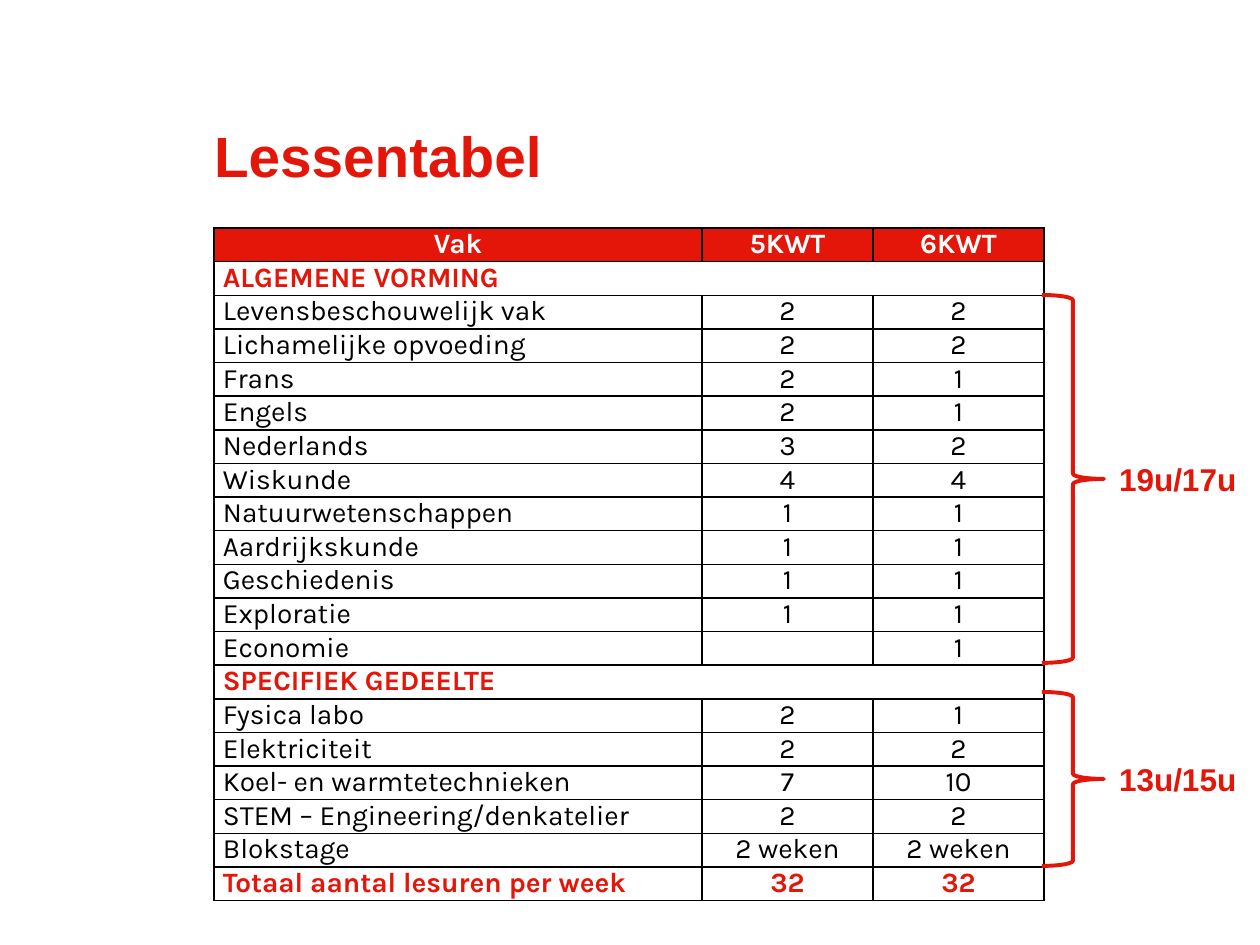
from pptx import Presentation
from pptx.dml.color import RGBColor
from pptx.enum.shapes import MSO_SHAPE
from pptx.enum.text import MSO_ANCHOR, PP_ALIGN
from pptx.oxml.ns import qn
from pptx.util import Pt
from lxml import etree

LEFT, CENTER = PP_ALIGN.LEFT, PP_ALIGN.CENTER
TOP = MSO_ANCHOR.TOP
BRACE = MSO_SHAPE.RIGHT_BRACE
EMU_PER_PX = 914400 / 126
COLORS = {"red": "E4160A", "brace": "E41509", "black": "000000", "white": "FFFFFF"}

HEADER = ("Vak", "5KWT", "6KWT")
GENERAL = [
    ("Levensbeschouwelijk vak", "2", "2"),
    ("Lichamelijke opvoeding", "2", "2"),
    ("Frans", "2", "1"),
    ("Engels", "2", "1"),
    ("Nederlands", "3", "2"),
    ("Wiskunde", "4", "4"),
    ("Natuurwetenschappen", "1", "1"),
    ("Aardrijkskunde", "1", "1"),
    ("Geschiedenis", "1", "1"),
    ("Exploratie", "1", "1"),
    ("Economie", "", "1"),
]
SPECIFIC = [
    ("Fysica labo", "2", "1"),
    ("Elektriciteit", "2", "2"),
    ("Koel- en warmtetechnieken", "7", "10"),
    ("STEM – Engineering/denkatelier", "2", "2"),
    ("Blokstage", "2 weken", "2 weken"),
]
TOTAL = ("Totaal aantal lesuren per week", "32", "32")
ROWS = [HEADER, ("ALGEMENE VORMING",), *GENERAL, ("SPECIFIEK GEDEELTE",), *SPECIFIC, TOTAL]
COLUMNS = (488, 171, 171)
ROW_HEIGHT = 32


def px(n):
    return round(n * EMU_PER_PX)


def rgb(name):
    return RGBColor.from_string(COLORS[name])


def write(tf, text, size=16, font="Karla", color="black", bold=False, align=LEFT):
    p = tf.paragraphs[0]
    p.alignment = align
    if not text:
        p._p.get_or_add_endParaRPr().set("sz", str(size * 100))
        return
    r = p.add_run()
    r.text = text
    r.font.size = Pt(size)
    r.font.name = font
    r.font.bold = bold
    r.font.color.rgb = rgb(color)


class Deck:
    def __init__(self, width, height):
        self.prs = Presentation()
        self.prs.slide_width, self.prs.slide_height = px(width), px(height)
        self.s = self.prs.slides.add_slide(self.prs.slide_layouts[6])

    def text(self, x, y, w, h, text, wrap=False, insets=(13, 6, 13, 6), **fmt):
        tf = self.s.shapes.add_textbox(px(x), px(y), px(w), px(h)).text_frame
        tf.word_wrap = wrap
        tf.vertical_anchor = TOP
        tf.margin_left, tf.margin_top, tf.margin_right, tf.margin_bottom = map(px, insets)
        write(tf, text, font="Arial", bold=True, **fmt)

    def brace(self, x, y, w, h, label):
        sp = self.s.shapes.add_shape(BRACE, px(x), px(y), px(w), px(h))
        sp.shadow.inherit = False
        sp.fill.background()
        sp.line.color.rgb = rgb("brace")
        sp.line.width = Pt(2.25)
        self.text(x + 64, y + h // 2 - 25, 144, 50, label, size=18, color="brace")

    def borders(self, cell):
        tc_pr = cell._tc.get_or_add_tcPr()
        for i, side in enumerate(("a:lnL", "a:lnR", "a:lnT", "a:lnB")):
            ln = etree.Element(qn(side), w=str(Pt(1)))
            fill = etree.SubElement(ln, qn("a:solidFill"))
            etree.SubElement(fill, qn("a:srgbClr"), val=COLORS["black"])
            tc_pr.insert(i, ln)

    def cell(self, cell, text, fill=None, **fmt):
        cell.margin_left = cell.margin_right = px(9)
        cell.margin_top = cell.margin_bottom = 0
        if fill:
            cell.fill.solid()
            cell.fill.fore_color.rgb = rgb(fill)
        else:
            cell.fill.background()
        self.borders(cell)
        write(cell.text_frame, text, **fmt)

    def table(self, x, y, columns, row_height, rows):
        frame = self.s.shapes.add_table(
            len(rows), len(columns), px(x), px(y), px(sum(columns)), px(row_height * len(rows)))
        table = frame.table
        table.first_row = table.horz_banding = False
        for column, width in zip(table.columns, columns):
            column.width = px(width)
        for i, row in enumerate(rows):
            is_header, is_section = row is HEADER, len(row) == 1
            strong = is_header or is_section or row is TOTAL
            color = "white" if is_header else "red" if strong else "black"
            for j in range(len(columns)):
                self.cell(table.cell(i, j), row[j] if j < len(row) else "",
                          fill="red" if is_header else None, color=color, bold=strong,
                          align=CENTER if j or is_header else LEFT)
            if is_section:
                table.cell(i, 0).merge(table.cell(i, len(columns) - 1))


def main():
    deck = Deck(1260, 945)
    deck.text(214, 115, 941, 70, "Lessentabel", wrap=True, insets=(0, 6, 13, 0),
              size=32.4, color="red")
    deck.table(214, 228, COLUMNS, ROW_HEIGHT, ROWS)
    deck.brace(1042, 295, 62, 368, "19u/17u")
    deck.brace(1042, 692, 62, 174, "13u/15u")
    deck.prs.save("out.pptx")


if __name__ == "__main__":
    main()
